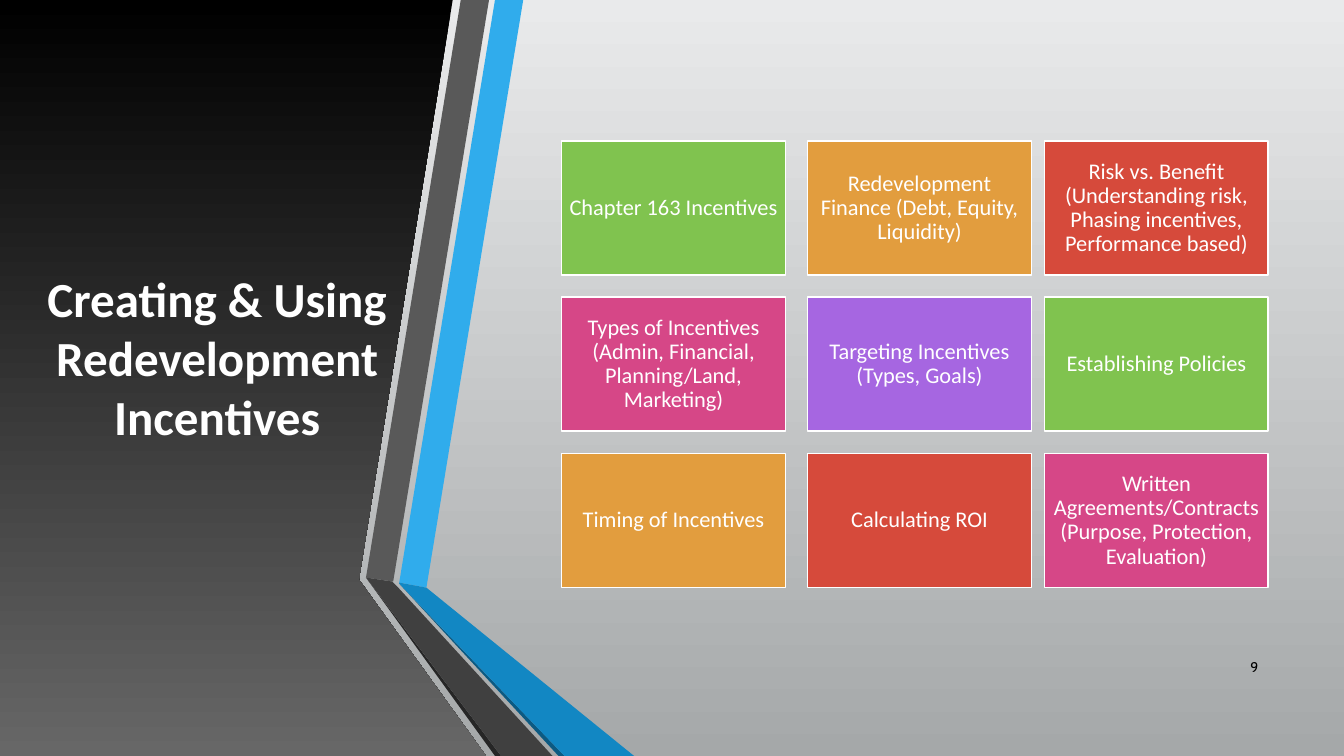
"""Build the slide on creating and using redevelopment incentives."""
from pptx import Presentation
from pptx.dml.color import RGBColor
from pptx.enum.shapes import MSO_SHAPE
from pptx.enum.text import MSO_ANCHOR, MSO_AUTO_SIZE, PP_ALIGN
from pptx.util import Inches, Pt

WHITE = RGBColor(0xFF, 0xFF, 0xFF)
BLACK = RGBColor(0, 0, 0)
PALE = RGBColor(0xE9, 0xEA, 0xEB)
SILVER = RGBColor(0xA5, 0xA8, 0xA9)
GRAY = RGBColor(0x67, 0x67, 0x67)
BLUE = RGBColor(0x30, 0xAC, 0xEC)
DEEP = RGBColor(0x12, 0x87, 0xC3)
NAVY = RGBColor(0x0C, 0x5A, 0x82)
SLATE = RGBColor(0x59, 0x59, 0x59)
COAL = RGBColor(0x40, 0x40, 0x40)
SOOT = RGBColor(0x26, 0x26, 0x26)
GREEN = RGBColor(0x80, 0xC3, 0x4F)
AMBER = RGBColor(0xE2, 0x9D, 0x3E)
RED = RGBColor(0xD6, 0x4A, 0x3B)
PINK = RGBColor(0xD6, 0x47, 0x87)
VIOLET = RGBColor(0xA6, 0x66, 0xE1)

TITLE = "Creating & Using Redevelopment Incentives"
TOPICS = [
    "Chapter 163 Incentives",
    "Redevelopment Finance (Debt, Equity, Liquidity)",
    "Risk vs. Benefit (Understanding risk, Phasing incentives, Performance based)",
    "Types of Incentives (Admin, Financial, Planning/Land, Marketing)",
    "Targeting Incentives (Types, Goals)",
    "Establishing Policies",
    "Timing of Incentives",
    "Calculating ROI",
    "Written Agreements/Contracts (Purpose, Protection, Evaluation)",
]
CYCLE = [GREEN, AMBER, RED, PINK, VIOLET]
LEFTS = [5.57, 8.01, 10.36]
TOP, PITCH = 1.4, 1.55
WIDE, HIGH = 2.22, 1.33

PANEL = [(0, 0), (4.49, 0), (3.56, 5.75), (4.82, 7.5), (0, 7.5)]
BANDS = [
    (BLUE, [(3.96, 5.78), (4.23, 5.83), (5.19, 0), (4.91, 0)]),
    (SLATE, [(4.85, 0), (4.57, 0), (3.63, 5.73), (3.9, 5.77)]),
    (SOOT, [(3.63, 5.73), (4.91, 7.5), (4.97, 7.5)]),
    (NAVY, [(3.96, 5.79), (5.54, 7.5), (5.6, 7.5)]),
    (DEEP, [(3.96, 5.78), (3.96, 5.79), (5.6, 7.5), (6.29, 7.5), (4.23, 5.83)]),
    (COAL, [(5.48, 7.5), (3.95, 5.83), (3.89, 5.77), (3.63, 5.73), (4.97, 7.5)]),
]


def shade(fill, first, last):
    fill.gradient()
    fill.gradient_angle = 270
    for stop, color in zip(fill.gradient_stops, (first, last)):
        stop.color.rgb = color


def outline(shapes, points):
    spots = [(Inches(x), Inches(y)) for x, y in points]
    pen = shapes.build_freeform(*spots[0])
    pen.add_line_segments(spots[1:], close=True)
    form = pen.convert_to_shape()
    form.shadow.inherit = False
    form.line.fill.background()
    return form


def write(shape, text, size, color, font="Calibri", align=PP_ALIGN.CENTER, bold=False):
    frame = shape.text_frame
    frame.word_wrap = True
    frame.auto_size = MSO_AUTO_SIZE.NONE
    frame.vertical_anchor = MSO_ANCHOR.MIDDLE
    para = frame.paragraphs[0]
    para.alignment = align
    run = para.add_run()
    run.text = text
    run.font.name = font
    run.font.size = Pt(size)
    run.font.bold = bold
    run.font.color.rgb = color
    return frame


def add_card(shapes, index, text):
    row, col = divmod(index, len(LEFTS))
    card = shapes.add_shape(
        MSO_SHAPE.RECTANGLE, Inches(LEFTS[col]), Inches(TOP + row * PITCH),
        Inches(WIDE), Inches(HIGH))
    card.shadow.inherit = False
    card.fill.solid()
    card.fill.fore_color.rgb = CYCLE[index % len(CYCLE)]
    card.line.color.rgb = WHITE
    card.line.width = Pt(1.25)
    frame = write(card, text, 16, WHITE)
    frame.margin_left = frame.margin_right = Inches(0.07)
    frame.margin_top = frame.margin_bottom = Inches(0.07)
    frame.paragraphs[0].line_spacing = 0.9


def main():
    deck = Presentation()
    deck.slide_width, deck.slide_height = Inches(13.33), Inches(7.5)
    slide = deck.slides.add_slide(deck.slide_layouts[5])
    shapes = slide.shapes
    shade(slide.background.fill, PALE, SILVER)

    shade(outline(shapes, PANEL).fill, BLACK, GRAY)
    title = shapes.title
    title.left, title.top = Inches(0), Inches(0.75)
    title.width, title.height = Inches(4.31), Inches(5.58)
    write(title, TITLE, 35, WHITE, bold=True)
    shapes._spTree.append(title._element)

    for color, points in BANDS:
        band = outline(shapes, points)
        band.fill.solid()
        band.fill.fore_color.rgb = color

    number = shapes.add_textbox(Inches(11.98), Inches(6.42), Inches(0.6), Inches(0.4))
    write(number, "9", 10, BLACK, "Cabin", PP_ALIGN.RIGHT)

    for index, text in enumerate(TOPICS):
        add_card(shapes, index, text)
    deck.save("out.pptx")


if __name__ == "__main__":
    main()
